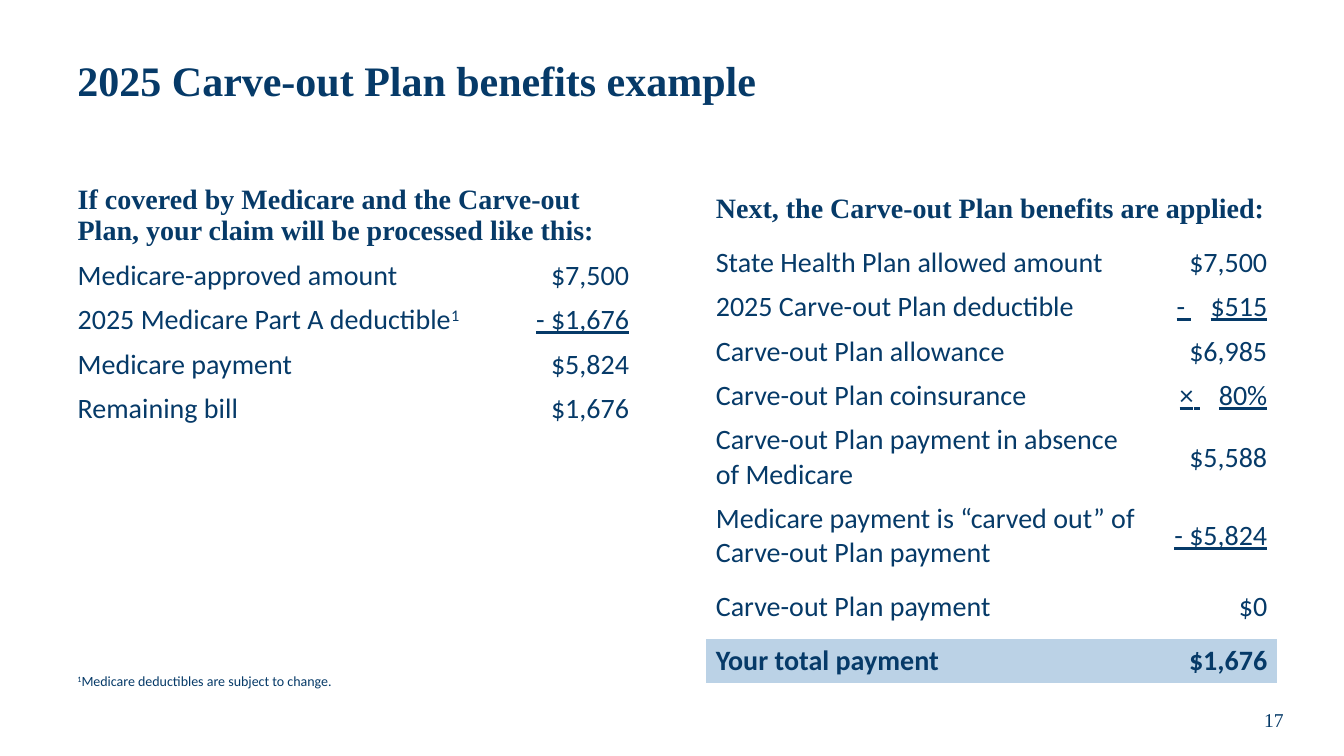
import pptx
import pptx.dml.color
import pptx.enum.text
import pptx.util

Inches, Pt = pptx.util.Inches, pptx.util.Pt
ALIGN = pptx.enum.text.PP_ALIGN
ANCHOR = pptx.enum.text.MSO_ANCHOR

# Content: a "^" starts a superscript, a pair is an operator set apart from its value
TITLE = "2025 Carve-out Plan benefits example"
FOOTNOTE = ["^1", "Medicare deductibles are subject to change."]
PAGE = "17"

MEDICARE = {
    "head": "If covered by Medicare and the Carve-out Plan, "
            "your claim will be processed like this:",
    "rows": [
        (["Medicare-approved amount"], "$7,500"),
        (["2025 Medicare Part A deductible", "^1"], "- $1,676"),
        (["Medicare payment"], "$5,824"),
        (["Remaining bill"], "$1,676"),
    ],
    "left": 0.67, "top": 1.75, "head_height": 0.72,
    "heights": {}, "total": False,
}
CARVE_OUT = {
    "head": "Next, the Carve-out Plan benefits are applied:",
    "rows": [
        (["State Health Plan allowed amount"], "$7,500"),
        (["2025 Carve-out Plan deductible"], ("-", "$515")),
        (["Carve-out Plan allowance"], "$6,985"),
        (["Carve-out Plan coinsurance"], ("×", "80%")),
        (["Carve-out Plan payment in absence of Medicare"], "$5,588"),
        (["Medicare payment is “carved out” of Carve-out Plan payment"], "- $5,824"),
        (["Carve-out Plan payment"], "$0"),
        (["Your total payment"], "$1,676"),
    ],
    "left": 7, "top": 1.76, "head_height": 0.63,
    "heights": {5: 0.78, 6: 0.78, 7: 0.63}, "total": True,
}

# Theme and layout
THEME = {
    "ink": pptx.dml.color.RGBColor.from_string("063A68"),
    "band": pptx.dml.color.RGBColor.from_string("BBD2E6"),
    "heading": "Times New Roman", "body": "Calibri",
    "title_size": 30, "table_size": 20, "page_size": 14, "note_size": 10,
}
COLUMNS = (4.36, 1.31)
ROW_HEIGHT = 0.44
OPERATOR_GAP = 1356  # extra width after an operator, in hundredths of a point
NO_GRID_STYLE = "{2D5ABB26-0587-4C30-8999-92F81FD0307C}"


def add_runs(p, texts, name, size, **formats):
    """Write the texts as runs of one paragraph."""
    for text in texts:
        r = p.add_run()
        r.text = text.lstrip("^")
        values = {"name": name, "size": Pt(size), "bold": False, **formats}
        for key, value in values.items():
            setattr(r.font, key, value)
        r.font.color.rgb = THEME["ink"]
        if text.startswith("^"):
            r._r.get_or_add_rPr().set("baseline", "30000")


def add_text(s, box, texts, name, size, anchor, align=ALIGN.LEFT, wrap=True, **formats):
    tf = s.shapes.add_textbox(*map(Inches, box)).text_frame
    tf.word_wrap = wrap
    tf.vertical_anchor = anchor
    p = tf.paragraphs[0]
    p.alignment = align
    add_runs(p, texts, name, size, **formats)
    return p


def fill_amount(p, amount, bold):
    """Right-align an amount; one with an operator is underlined."""
    p.alignment = ALIGN.RIGHT
    spaced = isinstance(amount, tuple)
    texts = [amount[0], " ", amount[1]] if spaced else [amount]
    underline = texts[0][0] in "-×"
    add_runs(p, texts, THEME["body"], THEME["table_size"], bold=bold, underline=underline)
    if spaced:
        p.runs[1]._r.get_or_add_rPr().set("spc", str(OPERATOR_GAP))


def add_claim_table(s, claim):
    rows = claim["rows"]
    heights = [claim["head_height"]]
    heights += [claim["heights"].get(i, ROW_HEIGHT) for i in range(1, len(rows) + 1)]
    box = (claim["left"], claim["top"], sum(COLUMNS), sum(heights))
    table = s.shapes.add_table(len(heights), len(COLUMNS), *map(Inches, box)).table
    table.first_row = table.horz_banding = False
    table._tbl.tblPr[0].text = NO_GRID_STYLE
    for column, width in zip(table.columns, COLUMNS):
        column.width = Inches(width)
    for row, height in zip(table.rows, heights):
        row.height = Inches(height)
    for cell in table.iter_cells():
        cell.vertical_anchor = ANCHOR.MIDDLE
        cell.fill.background()

    # Heading across both columns
    table.cell(0, 0).merge(table.cell(0, 1))
    add_runs(table.cell(0, 0).text_frame.paragraphs[0], [claim["head"]],
             THEME["heading"], THEME["table_size"], bold=True)

    # Labels and amounts
    for i, (label, amount) in enumerate(rows, 1):
        is_total = claim["total"] and i == len(rows)
        cells = [table.cell(i, j) for j in range(len(COLUMNS))]
        add_runs(cells[0].text_frame.paragraphs[0], label,
                 THEME["body"], THEME["table_size"], bold=is_total)
        fill_amount(cells[1].text_frame.paragraphs[0], amount, is_total)
        if is_total:
            for cell in cells:
                cell.fill.solid()
                cell.fill.fore_color.rgb = THEME["band"]


def main():
    prs = pptx.Presentation()
    prs.slide_width, prs.slide_height = Inches(13.33), Inches(7.5)
    s = prs.slides.add_slide(prs.slide_layouts[6])

    # Title
    p = add_text(s, (0.67, 0.25, 12, 1.15), [TITLE], THEME["heading"],
                 THEME["title_size"], ANCHOR.MIDDLE, bold=True)
    p.line_spacing = 0.9

    # Claim tables
    for claim in (MEDICARE, CARVE_OUT):
        add_claim_table(s, claim)

    # Footnote and page number
    add_text(s, (0.67, 6.62, 2.77, 0.27), FOOTNOTE, THEME["body"],
             THEME["note_size"], ANCHOR.TOP, wrap=False)
    add_text(s, (12.05, 6.89, 1.17, 0.5), [PAGE], THEME["heading"],
             THEME["page_size"], ANCHOR.MIDDLE, ALIGN.CENTER)
    prs.save("out.pptx")


if __name__ == "__main__":
    main()
